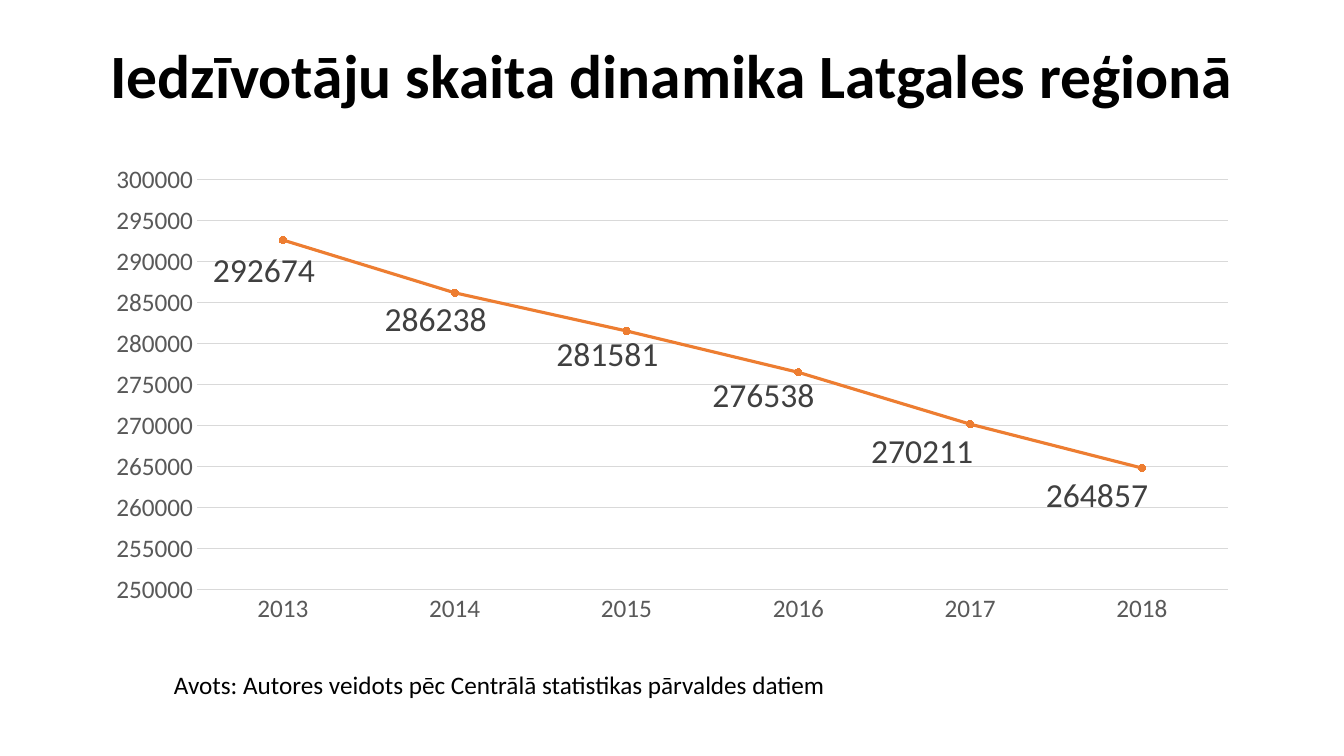
from lxml.etree import SubElement
from pptx import Presentation
from pptx.chart.data import CategoryChartData
from pptx.dml.color import RGBColor
from pptx.enum.chart import XL_CHART_TYPE as ChartType
from pptx.enum.chart import XL_LABEL_POSITION as LabelPosition
from pptx.enum.chart import XL_MARKER_STYLE as MarkerStyle
from pptx.enum.chart import XL_TICK_MARK as TickMark
from pptx.enum.text import MSO_ANCHOR as Anchor
from pptx.enum.text import MSO_AUTO_SIZE as AutoSize
from pptx.enum.text import PP_ALIGN as Align
from pptx.oxml import parse_xml
from pptx.oxml.ns import nsdecls, qn
from pptx.util import Pt

# Content
TITLE = "Iedzīvotāju skaita dinamika Latgales reģionā"
SOURCE = "Avots: Autores veidots pēc Centrālā statistikas pārvaldes datiem"
# Year, inhabitants, label shift from its place below the point (px)
POPULATION = [
    ("2013", 292674, (-19, 3)),
    ("2014", 286238, (-19, 0)),
    ("2015", 281581, (-19, -4)),
    ("2016", 276538, (-35, -4)),
    ("2017", 270211, (-48, 0)),
    ("2018", 264857, (-45, 0)),
]

# Places in px: left, top, width, height
PX = 12192000 / 1344
SLIDE_SIZE = (1344, 756)
TITLE_BOX = (93, 40, 1159, 146)
CHART_BOX = (93, 154, 1159, 480)
PLOT_BOX = (197, 180, 1031, 410)
SOURCE_BOX = (164, 664, 678, 40)

FONT = "Calibri"
BLACK = RGBColor(0x00, 0x00, 0x00)
ORANGE = RGBColor(0xED, 0x7D, 0x31)
LABEL_GREY = RGBColor(0x40, 0x40, 0x40)
AXIS_GREY = RGBColor(0x59, 0x59, 0x59)
GRID_GREY = RGBColor(0xD9, 0xD9, 0xD9)


def emu(lengths):
    return [round(length * PX) for length in lengths]


def style_font(font, size, color, bold=False):
    font.name = FONT
    font.size = Pt(size)
    font.bold = bold
    font.color.rgb = color


def style_line(line, color, width):
    line.color.rgb = color
    line.width = Pt(width)


def add_layout(parent, position, **settings):
    """Insert a manual chart layout at the given child position."""
    layout = parse_xml(f"<c:layout {nsdecls('c')}><c:manualLayout/></c:layout>")
    for name, value in settings.items():
        SubElement(layout[0], qn(f"c:{name}")).set("val", str(value))
    parent.insert(position, layout)


presentation = Presentation()
presentation.slide_width, presentation.slide_height = emu(SLIDE_SIZE)
slide = presentation.slides.add_slide(presentation.slide_layouts[5])

# Title
title = slide.shapes.title
title.left, title.top, title.width, title.height = emu(TITLE_BOX)
title.text_frame.vertical_anchor = Anchor.TOP
title.text_frame.word_wrap = True
paragraph = title.text_frame.paragraphs[0]
paragraph.alignment = Align.CENTER
paragraph.line_spacing = 0.9
run = paragraph.add_run()
run.text = TITLE
style_font(run.font, 44, BLACK, bold=True)

# Line chart
data = CategoryChartData()
data.categories = [year for year, _, _ in POPULATION]
data.add_series("Series 1", [count for _, count, _ in POPULATION])
chart = slide.shapes.add_chart(ChartType.LINE_MARKERS, *emu(CHART_BOX), data).chart
chart.has_title = False
chart.has_legend = False
style_font(chart.font, 24, BLACK)

chart_left, chart_top, chart_width, chart_height = CHART_BOX
plot_left, plot_top, plot_width, plot_height = PLOT_BOX
plot_area = chart.plots[0]._element.getparent()
for old_layout in plot_area.findall(qn("c:layout")):
    plot_area.remove(old_layout)
add_layout(
    plot_area, 0, layoutTarget="inner", xMode="edge", yMode="edge",
    x=(plot_left - chart_left) / chart_width,
    y=(plot_top - chart_top) / chart_height,
    w=plot_width / chart_width,
    h=plot_height / chart_height,
)

# Axes
years, counts = chart.category_axis, chart.value_axis
for axis in (years, counts):
    axis.major_tick_mark = axis.minor_tick_mark = TickMark.NONE
    style_font(axis.tick_labels.font, 18, AXIS_GREY)
style_line(years.format.line, GRID_GREY, 0.75)
counts.format.line.fill.background()
counts.minimum_scale, counts.maximum_scale, counts.major_unit = 250000, 300000, 5000
counts.has_major_gridlines = True
style_line(counts.major_gridlines.format.line, GRID_GREY, 0.75)

# Series and its labels
chart.plots[0].vary_by_categories = False
series = chart.plots[0].series[0]
series.smooth = False
style_line(series.format.line, ORANGE, 2.25)
series.marker.style = MarkerStyle.CIRCLE
series.marker.size = 5
series.marker.format.fill.solid()
series.marker.format.fill.fore_color.rgb = ORANGE
style_line(series.marker.format.line, ORANGE, 0.75)
series.data_labels.show_value = True
series.data_labels.position = LabelPosition.BELOW
style_font(series.data_labels.font, 24, LABEL_GREY)
for index, (_, _, (shift_x, shift_y)) in enumerate(POPULATION):
    label = series.points[index].data_label
    label.position = LabelPosition.BELOW
    style_font(label.font, 24, LABEL_GREY)
    element = series.data_labels._element.findall(qn("c:dLbl"))[index]
    add_layout(element, 1, x=shift_x / chart_width, y=shift_y / chart_height)

# Source note
source = slide.shapes.add_textbox(*emu(SOURCE_BOX))
source.text_frame.word_wrap = True
source.text_frame.auto_size = AutoSize.SHAPE_TO_FIT_TEXT
run = source.text_frame.paragraphs[0].add_run()
run.text = SOURCE
style_font(run.font, 18, BLACK)

presentation.save("out.pptx")
